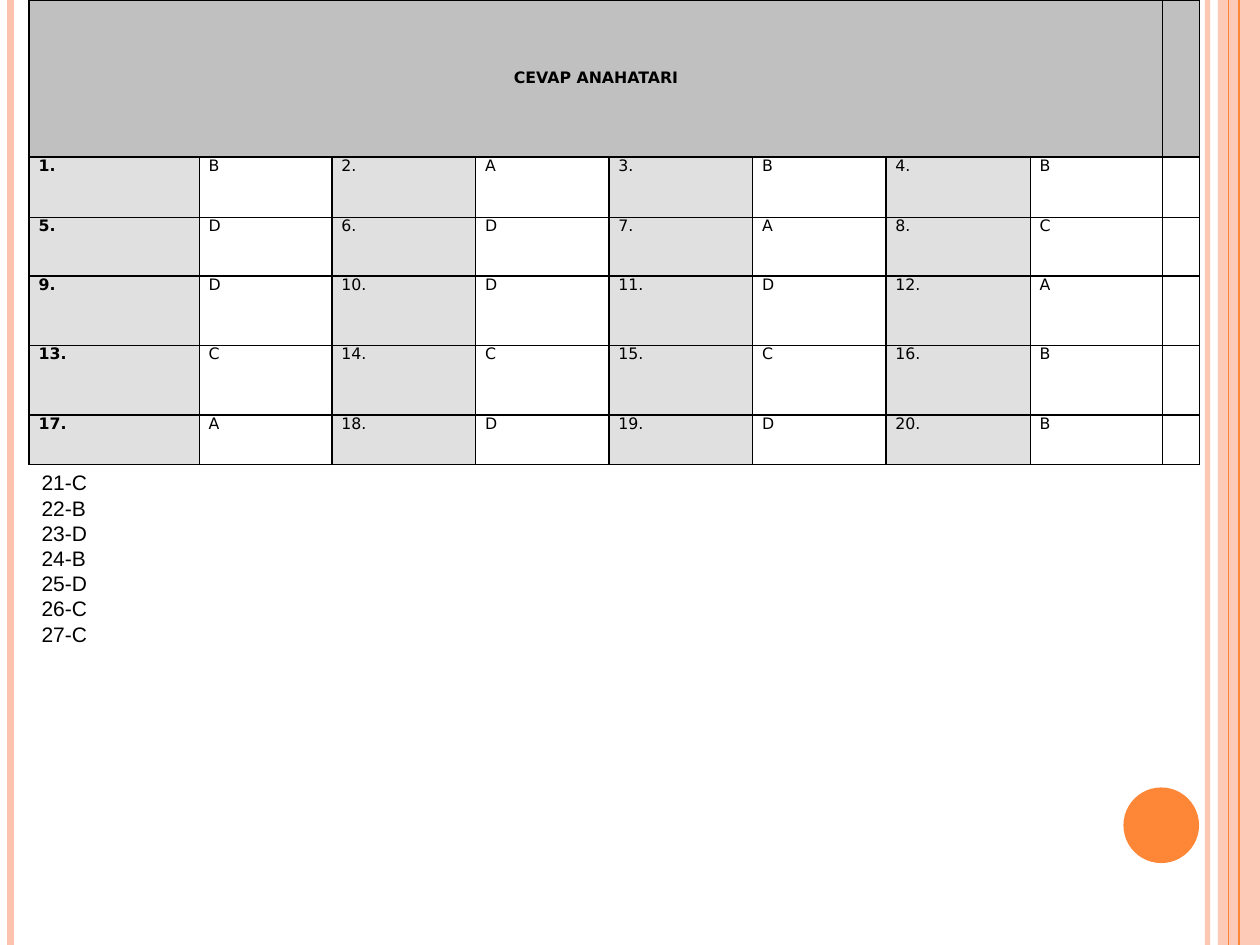
from lxml import etree
from pptx import Presentation
from pptx.dml.color import RGBColor
from pptx.enum.shapes import MSO_CONNECTOR, MSO_SHAPE
from pptx.enum.text import MSO_ANCHOR, PP_ALIGN
from pptx.oxml.ns import qn
from pptx.util import Pt

STRAIGHT = MSO_CONNECTOR.STRAIGHT
RECTANGLE, OVAL = MSO_SHAPE.RECTANGLE, MSO_SHAPE.OVAL
MIDDLE = MSO_ANCHOR.MIDDLE
CENTER = PP_ALIGN.CENTER

BLACK = RGBColor(0x00, 0x00, 0x00)
PEACH = RGBColor(0xFE, 0xC3, 0xAE)
ORANGE = RGBColor(0xFE, 0x86, 0x37)
HEADER_GRAY = RGBColor(0xC0, 0xC0, 0xC0)
NUMBER_GRAY = RGBColor(0xE0, 0xE0, 0xE0)

SLIDE_WIDTH, SLIDE_HEIGHT = 720, 540
COLUMN_WIDTHS = [97.2, 75.8, 82.1, 76.2, 82.1, 76.2, 82.5, 75.6, 21.1]
ROW_HEIGHTS = [89.8, 34.4, 33.7, 39.5, 39.8, 28.2]
ANSWER_ROWS = ["BABB", "DDAC", "DDDA", "CCCB", "ADDB"]
FURTHER_ANSWERS = "CBDBDCC"
FIRST_FURTHER_NUMBER = 21


def set_opacity(color_format_owner, percent):
    color = color_format_owner.find(".//" + qn("a:srgbClr"))
    etree.SubElement(color, qn("a:alpha"), val=str(percent * 1000))


def add_stripe(slide, x, width, color, opacity=100):
    """Draw a vertical line over the full slide height."""
    stripe = slide.shapes.add_connector(
        STRAIGHT, Pt(x), Pt(0), Pt(x), Pt(SLIDE_HEIGHT))
    stripe.line.width = Pt(width)
    stripe.line.color.rgb = color
    properties = stripe._element.spPr
    etree.SubElement(properties, qn("a:effectLst"))
    if opacity < 100:
        set_opacity(properties, opacity)


def add_filled_shape(slide, kind, left, top, width, height, color):
    shape = slide.shapes.add_shape(
        kind, Pt(left), Pt(top), Pt(width), Pt(height))
    shape.shadow.inherit = False
    shape.fill.solid()
    shape.fill.fore_color.rgb = color
    shape.line.fill.background()
    return shape


def add_decoration(slide):
    add_stripe(slide, 690, 3, PEACH, opacity=93)
    add_stripe(slide, 6, 4.5, PEACH)
    add_stripe(slide, 708, 1.5, ORANGE)
    band = add_filled_shape(
        slide, RECTANGLE, 696, 0, 24, SLIDE_HEIGHT, PEACH)
    set_opacity(band._element.spPr, 87)
    add_stripe(slide, 702, 0.75, ORANGE)
    add_stripe(slide, 708, 0.75, ORANGE)
    add_filled_shape(slide, OVAL, 642, 450, 43.2, 43.2, ORANGE)


def set_borders(cell):
    properties = cell._tc.get_or_add_tcPr()
    for side in ("lnL", "lnR", "lnT", "lnB"):
        border = etree.SubElement(properties, qn(f"a:{side}"), w=str(Pt(1)))
        fill = etree.SubElement(border, qn("a:solidFill"))
        etree.SubElement(fill, qn("a:srgbClr"), val=str(BLACK))


def style_cell(cell, fill_color=None):
    set_borders(cell)
    if fill_color is None:
        cell.fill.background()
    else:
        cell.fill.solid()
        cell.fill.fore_color.rgb = fill_color
    cell.margin_left = cell.margin_right = Pt(5.4)
    cell.margin_top = cell.margin_bottom = Pt(0)


def write_cell(cell, text, bold=False):
    cell.text = text
    font = cell.text_frame.paragraphs[0].font
    font.name = "DejaVu Sans"
    font.size = Pt(9)
    font.bold = bold
    font.color.rgb = BLACK


def add_answer_table(slide):
    table = slide.shapes.add_table(
        len(ROW_HEIGHTS), len(COLUMN_WIDTHS), Pt(16.7), Pt(0),
        Pt(sum(COLUMN_WIDTHS)), Pt(sum(ROW_HEIGHTS))).table
    table.first_row = table.horz_banding = False
    for column, width in zip(table.columns, COLUMN_WIDTHS):
        column.width = Pt(width)
    for row, height in zip(table.rows, ROW_HEIGHTS):
        row.height = Pt(height)

    last_column = len(COLUMN_WIDTHS) - 1
    for r in range(len(ROW_HEIGHTS)):
        for c in range(len(COLUMN_WIDTHS)):
            is_number = c % 2 == 0 and c < last_column
            body_fill = NUMBER_GRAY if is_number else None
            style_cell(table.cell(r, c), HEADER_GRAY if r == 0 else body_fill)

    header = table.cell(0, 0)
    header.merge(table.cell(0, last_column - 1))
    write_cell(header, "CEVAP ANAHATARI", bold=True)
    header.vertical_anchor = MIDDLE
    header.text_frame.paragraphs[0].alignment = CENTER

    for r, answers in enumerate(ANSWER_ROWS):
        for i, answer in enumerate(answers):
            number = r * len(answers) + i + 1
            write_cell(table.cell(r + 1, 2 * i), f"{number}.", bold=i == 0)
            write_cell(table.cell(r + 1, 2 * i + 1), answer)


def add_further_answers(slide):
    box = slide.shapes.add_textbox(Pt(16.7), Pt(264.5), Pt(292.3), Pt(108.7))
    frame = box.text_frame
    frame.word_wrap = True
    frame.vertical_anchor = MIDDLE
    frame.text = "\n".join(
        f"{number}-{answer}" for number, answer
        in enumerate(FURTHER_ANSWERS, FIRST_FURTHER_NUMBER))
    for paragraph in frame.paragraphs:
        paragraph.font.name = "Arial"
        paragraph.font.size = Pt(12)
        paragraph.font.color.rgb = BLACK


def main():
    presentation = Presentation()
    presentation.slide_width = Pt(SLIDE_WIDTH)
    presentation.slide_height = Pt(SLIDE_HEIGHT)
    slide = presentation.slides.add_slide(presentation.slide_layouts[6])
    add_decoration(slide)
    add_answer_table(slide)
    add_further_answers(slide)
    presentation.save("out.pptx")


if __name__ == "__main__":
    main()
